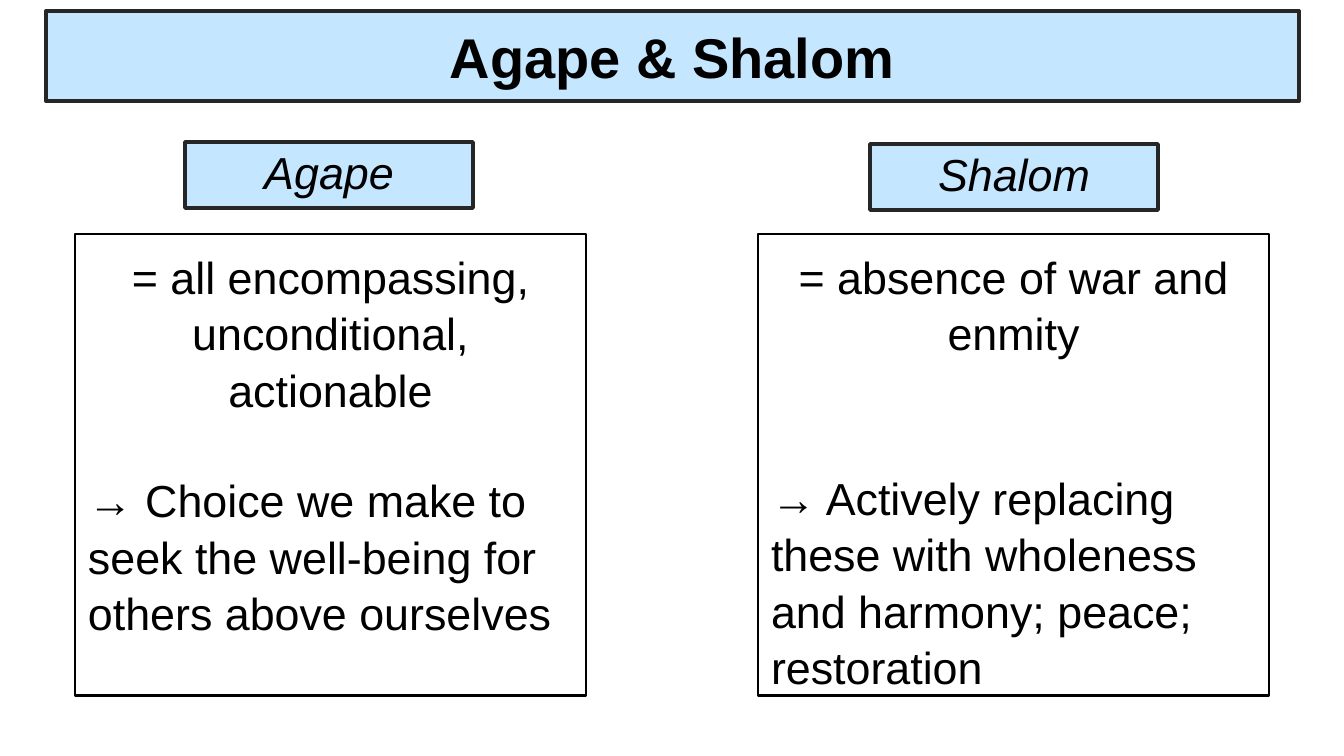
from pptx import Presentation
from pptx.dml.color import RGBColor
from pptx.enum.shapes import MSO_SHAPE as Shape
from pptx.enum.text import MSO_ANCHOR as Anchor, PP_ALIGN as Align
from pptx.util import Pt

COLOURS = {"sky": "C5E6FF", "edge": "262626", "ink": "000000"}
TITLE = "Agape & Shalom"
CONCEPTS = [
    {
        "name": "Agape",
        "label_at": (185, 142),
        "body_left": 75,
        "meaning": "= all encompassing, unconditional, actionable",
        "action": "→ Choice we make to seek the well-being for others above ourselves",
        "gap_lines": 1,
    },
    {
        "name": "Shalom",
        "label_at": (870, 144),
        "body_left": 758,
        "meaning": "= absence of war and enmity",
        "action": "→ Actively replacing these with wholeness and harmony; peace; restoration",
        "gap_lines": 2,
    },
]

SCALE = 914400 / 134.4
LINE_PX = 54
INSET = 13
TITLE_BOX = (46, 11, 1253, 90)
LABEL_SIZE = (288, 66)
BODY_TOP, BODY_SIZE = 234, (511, 462)
TITLE_FONT = {"size": Pt(30), "bold": True}
LABEL_FONT = {"size": Pt(24), "italic": True}
BODY_FONT = {"size": Pt(24)}


def px(value):
    return round(value * SCALE)


def add_box(page, place, line, width, fill=None, anchor=Anchor.MIDDLE, insets=(INSET, INSET)):
    box = page.shapes.add_shape(Shape.RECTANGLE, *map(px, place))
    box.shadow.inherit = False
    if fill:
        box.fill.solid()
        box.fill.fore_color.rgb = RGBColor.from_string(COLOURS[fill])
    else:
        box.fill.background()
    box.line.color.rgb = RGBColor.from_string(COLOURS[line])
    box.line.width = Pt(width)
    top, bottom = insets
    frame_format = {
        "word_wrap": True,
        "vertical_anchor": anchor,
        "margin_left": px(INSET),
        "margin_right": px(INSET),
        "margin_top": px(top),
        "margin_bottom": px(bottom),
    }
    for key, value in frame_format.items():
        setattr(box.text_frame, key, value)
    return box


def write(para, text, font, **layout):
    span = para.add_run()
    span.text = text
    span.font.color.rgb = RGBColor.from_string(COLOURS["ink"])
    for key, value in {"name": "Arial", **font}.items():
        setattr(span.font, key, value)
    for key, value in {"alignment": Align.CENTER, **layout}.items():
        setattr(para, key, value)


def add_concept(page, concept):
    label = add_box(page, (*concept["label_at"], *LABEL_SIZE), "edge", 2, "sky", insets=(0, 6))
    write(label.text_frame.paragraphs[0], concept["name"], LABEL_FONT)

    place = (concept["body_left"], BODY_TOP, *BODY_SIZE)
    body = add_box(page, place, "ink", 1.5, anchor=Anchor.TOP)
    frame = body.text_frame
    write(frame.paragraphs[0], concept["meaning"], BODY_FONT, line_spacing=1.05)
    write(frame.add_paragraph(), concept["action"], BODY_FONT, line_spacing=1.05,
          alignment=Align.LEFT, space_before=px(concept["gap_lines"] * LINE_PX))


def main():
    deck = Presentation()
    deck.slide_width, deck.slide_height = px(1344), px(756)
    page = deck.slides.add_slide(deck.slide_layouts[6])
    heading = add_box(page, TITLE_BOX, "edge", 2, "sky")
    write(heading.text_frame.paragraphs[0], TITLE, TITLE_FONT)
    for concept in CONCEPTS:
        add_concept(page, concept)
    deck.save("out.pptx")


if __name__ == "__main__":
    main()
